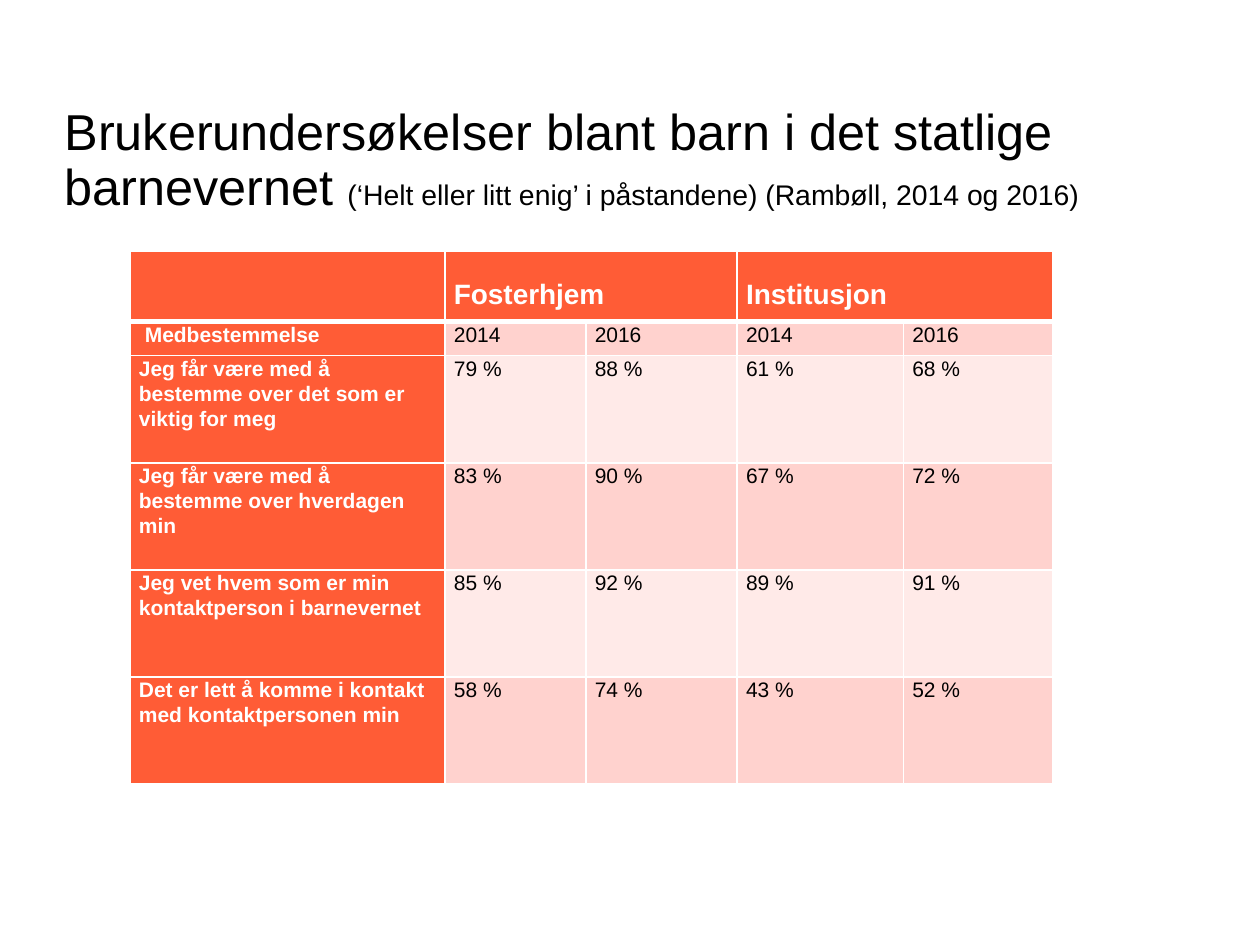
from pptx import Presentation
from pptx.dml.color import RGBColor
from pptx.enum.text import MSO_ANCHOR
from pptx.oxml.ns import qn
from pptx.util import Cm, Pt
from lxml.etree import SubElement

COLORS = {"head": "FF5C36", "dark": "FFD2CE", "light": "FFEAE8",
          "line": "FFFFFF", "white": "FFFFFF", "black": "000000"}
WIDTHS = [6.35, 2.84, 3.05, 3.35, 3.02]
HEIGHTS = [1.42, 0.69] + [2.16] * 4
GROUPS = ["Fosterhjem", "Institusjon"]
ROWS = [
    ["Medbestemmelse", "2014", "2016", "2014", "2016"],
    ["Jeg får være med å bestemme over det som er viktig for meg",
     "79 %", "88 %", "61 %", "68 %"],
    ["Jeg får være med å bestemme over hverdagen min",
     "83 %", "90 %", "67 %", "72 %"],
    ["Jeg vet hvem som er min kontaktperson i barnevernet",
     "85 %", "92 %", "89 %", "91 %"],
    ["Det er lett å komme i kontakt med kontaktpersonen min",
     "58 %", "74 %", "43 %", "52 %"],
]


def apply(target, values):
    for name, value in values.items():
        setattr(target, name, value)


class Page:
    font = "Arial"

    def __init__(self, deck):
        self.slide = deck.slides.add_slide(deck.slide_layouts[6])

    def add_text(self, para, text, size, color="black", bold=False):
        run = para.add_run()
        run.text = text
        apply(run.font, {"name": self.font, "size": Pt(size), "bold": bold})
        run.font.color.rgb = RGBColor.from_string(COLORS[color])

    def title(self, box, parts):
        frame = self.slide.shapes.add_textbox(*map(Cm, box)).text_frame
        apply(frame, {"word_wrap": True, "vertical_anchor": MSO_ANCHOR.TOP,
                      "margin_left": 0, "margin_right": 0,
                      "margin_top": 0, "margin_bottom": 0})
        para = frame.paragraphs[0]
        para.line_spacing = 0.9
        for text, size in parts:
            self.add_text(para, text, size)

    def table(self, left, top, widths, heights):
        grid = self.slide.shapes.add_table(
            len(heights), len(widths), Cm(left), Cm(top),
            Cm(sum(widths)), Cm(sum(heights))).table
        apply(grid, {"first_row": False, "horz_banding": False})
        for col, width in zip(grid.columns, widths):
            col.width = Cm(width)
        for row, height in zip(grid.rows, heights):
            row.height = Cm(height)
        return grid

    def paint(self, cell, fill, **lines):
        # Borders must precede the fill in the cell properties
        props = cell._tc.get_or_add_tcPr()
        for side in "LRTB":
            line = SubElement(props, qn(f"a:ln{side}"),
                              w=str(Pt(lines.get(side, 1))))
            solid = SubElement(line, qn("a:solidFill"))
            SubElement(solid, qn("a:srgbClr"), val=COLORS["line"])
        cell.fill.solid()
        cell.fill.fore_color.rgb = RGBColor.from_string(COLORS[fill])

    def label(self, cell, text, size, color, bold, left=0.18, top=0):
        apply(cell, {"margin_left": Cm(left), "margin_right": Cm(0.18),
                     "margin_top": Cm(top), "margin_bottom": 0})
        para = cell.text_frame.paragraphs[0]
        para.line_spacing = 1.07
        self.add_text(para, text, size, color, bold)


def main():
    deck = Presentation()
    apply(deck, {"slide_width": Cm(25.4), "slide_height": Cm(19.05)})
    page = Page(deck)

    # Title
    page.title((1.3, 2.16, 21.44, 2.67), [
        ("Brukerundersøkelser blant barn i det statlige barnevernet ", 28.8),
        ("(‘Helt eller litt enig’ i påstandene) (Rambøll, 2014 og 2016)", 16.2),
    ])

    # Header row with one merged cell per group
    grid = page.table(2.62, 5.06, WIDTHS, HEIGHTS)
    for col in range(len(WIDTHS)):
        page.paint(grid.cell(0, col), "head", B=3)
    for i, name in enumerate(GROUPS):
        first = grid.cell(0, 1 + 2 * i)
        first.merge(grid.cell(0, 2 + 2 * i))
        page.label(first, name, 16, "white", True, top=0.52)

    # Row names and banded values
    for r, row in enumerate(ROWS, 1):
        band = "dark" if r % 2 else "light"
        for c, text in enumerate(row):
            cell, head = grid.cell(r, c), c == 0
            page.paint(cell, "head" if head else band, T=3 if r == 1 else 1)
            page.label(cell, text, 12, "white" if head else "black", head,
                       left=0.3 if head and r == 1 else 0.18)

    deck.save("out.pptx")


if __name__ == "__main__":
    main()
